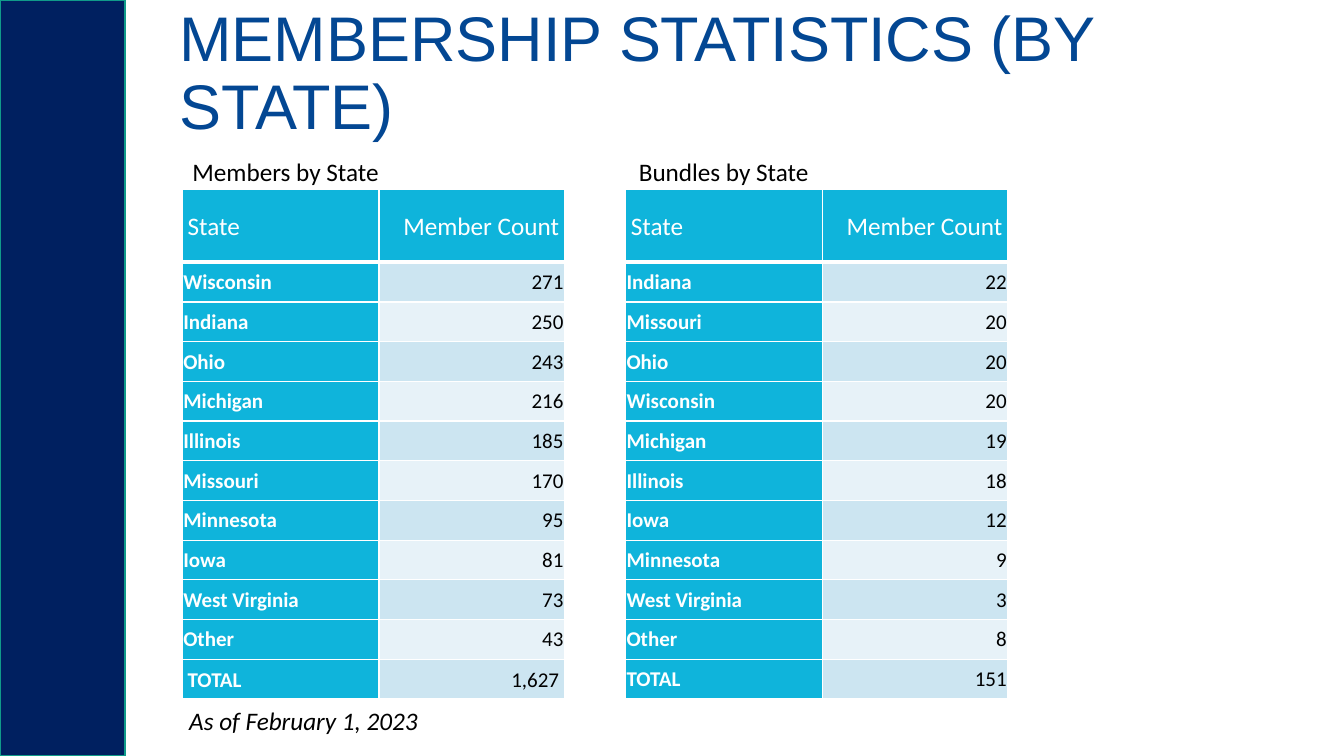
from lxml import etree
from pptx import Presentation
from pptx.dml.color import RGBColor
from pptx.enum import shapes, text
from pptx.oxml import ns
from pptx.util import Cm, Pt

# Content
TITLE = "MEMBERSHIP STATISTICS (BY STATE)"
AS_OF = "As of February 1, 2023"
HEADER = ("State", "Member Count")
TABLES = [
    {"caption": "Members by State", "left": 4.6, "caption_left": 4.6, "roomy_total": True,
     "rows": [("Wisconsin", "271"), ("Indiana", "250"), ("Ohio", "243"),
              ("Michigan", "216"), ("Illinois", "185"), ("Missouri", "170"),
              ("Minnesota", "95"), ("Iowa", "81"), ("West Virginia", "73"),
              ("Other", "43"), ("TOTAL", "1,627")]},
    {"caption": "Bundles by State", "left": 15.77, "caption_left": 15.85, "roomy_total": False,
     "rows": [("Indiana", "22"), ("Missouri", "20"), ("Ohio", "20"),
              ("Wisconsin", "20"), ("Michigan", "19"), ("Illinois", "18"),
              ("Iowa", "12"), ("Minnesota", "9"), ("West Virginia", "3"),
              ("Other", "8"), ("TOTAL", "151")]},
]

# Look and measures (cm)
COLORS = {"navy": "002060", "teal": "109B8A", "title": "034793", "cyan": "0FB4DB",
          "dark_band": "CCE5F1", "light_band": "E7F2F8", "white": "FFFFFF", "black": "000000"}
SLIDE_W, SLIDE_H = 33.87, 19.05
TABLE_TOP, COLS, HEADER_H, ROW_H = 4.78, (4.95, 4.67), 1.83, 1.0
ROOMY = {"margin_left": Cm(0.13), "margin_right": Cm(0.13), "margin_top": 0, "margin_bottom": 0}
TIGHT = {"margin_left": Cm(0.02), "margin_right": Cm(0.02),
         "margin_top": Cm(0.02), "margin_bottom": 0}


def rgb(name):
    return RGBColor.from_string(COLORS[name])


def set_all(obj, values):
    for name, value in values.items():
        setattr(obj, name, value)


def write(p, words, color, **font):
    r = p.add_run()
    r.text = words
    set_all(r.font, {"name": "Calibri", "size": Pt(18), **font})
    r.font.color.rgb = rgb(color)


def add_label(words, left, top, width, **font):
    sp = slide.shapes.add_textbox(Cm(left), Cm(top), Cm(width), Cm(1.02))
    set_all(sp.text_frame, {"word_wrap": True, "auto_size": text.MSO_AUTO_SIZE.SHAPE_TO_FIT_TEXT})
    write(sp.text_frame.paragraphs[0], words, "black", **font)


def add_borders(cell, bottom):
    tcPr = cell._tc.get_or_add_tcPr()
    for i, (side, width) in enumerate((("L", 1), ("R", 1), ("T", 1), ("B", bottom))):
        ln = etree.Element(ns.qn(f"a:ln{side}"), w=str(Pt(width)))
        fill = etree.SubElement(ln, ns.qn("a:solidFill"))
        etree.SubElement(fill, ns.qn("a:srgbClr"), val=COLORS["white"])
        tcPr.insert(i, ln)


def fill_cell(cell, words, row, col, roomy):
    header = row == 0
    if header or col == 0:
        fill, color = "cyan", "white"
    else:
        fill, color = ("dark_band" if row % 2 else "light_band"), "black"
    cell.fill.solid()
    cell.fill.fore_color.rgb = rgb(fill)
    set_all(cell, {"vertical_anchor": text.MSO_ANCHOR.MIDDLE, **(ROOMY if roomy else TIGHT)})
    p = cell.text_frame.paragraphs[0]
    p.alignment = text.PP_ALIGN.RIGHT if col else text.PP_ALIGN.LEFT
    if roomy:
        p.line_spacing = 1.07
    write(p, words, color, size=Pt(18 if header else 15), bold=not header and col == 0)
    add_borders(cell, 3 if header else 1)


def add_state_table(data):
    rows = [HEADER] + data["rows"]
    height = HEADER_H + ROW_H * len(data["rows"])
    table = slide.shapes.add_table(len(rows), len(COLS), Cm(data["left"]), Cm(TABLE_TOP),
                                   Cm(sum(COLS)), Cm(height)).table
    for column, width in zip(table.columns, COLS):
        column.width = Cm(width)
    for i, values in enumerate(rows):
        table.rows[i].height = Cm(ROW_H if i else HEADER_H)
        roomy = i == 0 or (values[0] == "TOTAL" and data["roomy_total"])
        for j, words in enumerate(values):
            fill_cell(table.cell(i, j), words, i, j, roomy)


prs = Presentation()
set_all(prs, {"slide_width": Cm(SLIDE_W), "slide_height": Cm(SLIDE_H)})
slide = prs.slides.add_slide(prs.slide_layouts[5])

# Side band
band = slide.shapes.add_shape(shapes.MSO_SHAPE.RECTANGLE, 0, 0, Cm(3.15), Cm(SLIDE_H))
band.shadow.inherit = False
band.fill.solid()
band.fill.fore_color.rgb = rgb("navy")
band.line.color.rgb = rgb("teal")
band.line.width = Pt(1)

# Title
title = slide.shapes.title
set_all(title, {"left": Cm(4.52), "top": Cm(0.94), "width": Cm(28.14), "height": Cm(2.79)})
tf = title.text_frame
set_all(tf, {"margin_left": 0, "margin_right": 0, "word_wrap": True,
             "vertical_anchor": text.MSO_ANCHOR.BOTTOM, "auto_size": text.MSO_AUTO_SIZE.NONE})
set_all(tf.paragraphs[0], {"alignment": text.PP_ALIGN.LEFT, "line_spacing": 0.9})
write(tf.paragraphs[0], TITLE, "title", name="Arial", size=Pt(45))

# Tables with captions, then the date
for data in TABLES:
    add_state_table(data)
    add_label(data["caption"], data["caption_left"], 3.81, 6.0)
add_label(AS_OF, 4.52, 17.65, 10.34, italic=True)

prs.save("out.pptx")
